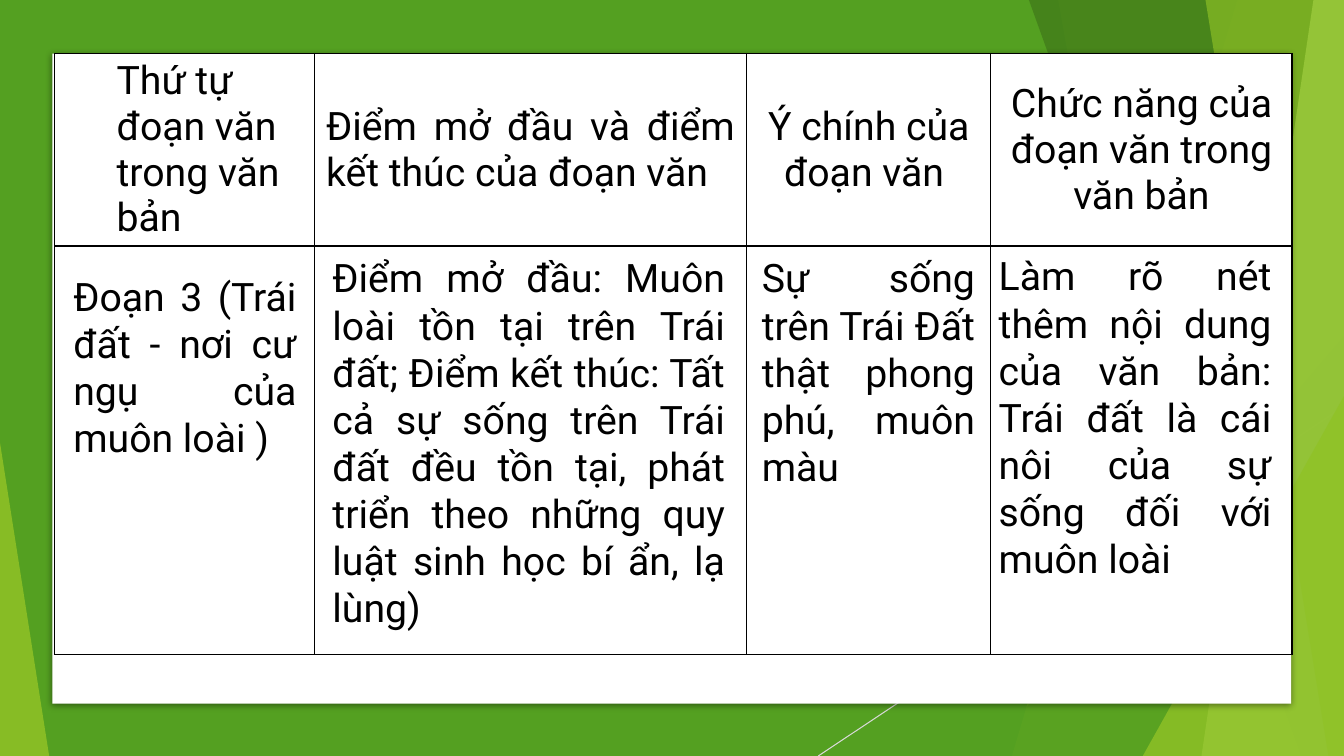
from dataclasses import dataclass

from lxml import etree
from pptx import Presentation
from pptx.dml.color import RGBColor
from pptx.enum.shapes import MSO_CONNECTOR, MSO_SHAPE
from pptx.enum.text import MSO_ANCHOR, MSO_AUTO_SIZE, PP_ALIGN
from pptx.oxml.ns import qn
from pptx.slide import Slide
from pptx.text.text import TextFrame
from pptx.util import Cm, Pt

RECTANGLE = MSO_SHAPE.RECTANGLE
TRIANGLE = MSO_SHAPE.ISOSCELES_TRIANGLE
STRAIGHT = MSO_CONNECTOR.STRAIGHT
MIDDLE = MSO_ANCHOR.MIDDLE
GROW = MSO_AUTO_SIZE.SHAPE_TO_FIT_TEXT
LEFT, CENTER, JUSTIFY = PP_ALIGN.LEFT, PP_ALIGN.CENTER, PP_ALIGN.JUSTIFY

SLIDE_WIDTH, SLIDE_HEIGHT = 33.87, 19.05


@dataclass(frozen=True)
class Theme:
    font: str = "Roboto"
    size: float = 28
    text: str = "000000"
    border: str = "000000"
    card: str = "FFFFFF"
    ray: str = "D9D9D9"
    green: str = "54A021"
    dark: str = "3F7819"
    lime: str = "90C226"
    pale: str = "C0E474"


THEME = Theme()


@dataclass(frozen=True)
class Band:
    """Facet from its slanted left edge to the right edge of the slide."""
    top_x: float
    bottom_x: float
    color: str
    opacity: int


@dataclass(frozen=True)
class Wedge:
    """Right-angled triangle standing on the bottom edge of the slide."""
    left: float
    top: float
    width: float
    apex: float
    color: str
    opacity: int


@dataclass(frozen=True)
class Header:
    text: str
    column_width: float
    align: PP_ALIGN
    indent: float = 0


@dataclass(frozen=True)
class Entry:
    text: str
    left: float
    top: float
    width: float
    height: float


FACETS = [
    Band(31.19, 25.5, THEME.lime, 30),
    Band(26.67, 30.05, THEME.lime, 20),
    Wedge(24.82, 8.46, 9.05, 1, THEME.green, 72),
    Band(25.93, 32.79, THEME.dark, 70),
    Band(33.1, 30.28, THEME.pale, 70),
    Band(30.38, 33.48, THEME.lime, 65),
    Wedge(28.8, 9.98, 5.07, 1, THEME.lime, 80),
    Wedge(0, 11.15, 1.24, 0, THEME.lime, 85),
]
HEADERS = [
    Header("Thứ tự đoạn văn trong văn bản", 6.55, LEFT, 1.27),
    Header("Điểm mở đầu và điểm kết thúc của đoạn văn ", 10.9, JUSTIFY),
    Header("Ý chính của đoạn văn ", 6.15, CENTER),
    Header("Chức năng của đoạn văn trong văn bản", 7.59, CENTER),
]
ROW_HEIGHTS = [4.85, 10.29]
ENTRIES = [
    Entry("Điểm mở đầu: Muôn loài tồn tại trên Trái đất; Điểm kết thúc: "
          "Tất cả sự sống trên Trái đất đều tồn tại, phát triển theo những "
          "quy luật sinh học bí ẩn, lạ lùng)", 8.13, 6.27, 10.39, 9.83),
    Entry("Sự sống trên Trái Đất thật phong phú, muôn màu",
          18.95, 6.27, 5.87, 6.25),
    Entry("Làm rõ nét thêm nội dung của văn bản: Trái đất là cái nôi của "
          "sự sống đối với muôn loài", 24.92, 6.22, 7.37, 8.64),
    Entry("Đoạn 3 (Trái đất - nơi cư ngụ của muôn loài )",
          1.6, 6.73, 6.12, 6.25),
]


def paint(shape, color: str, opacity: int = 100) -> None:
    shape.shadow.inherit = False
    shape.line.fill.background()
    shape.fill.solid()
    shape.fill.fore_color.rgb = RGBColor.from_string(color)
    if opacity < 100:
        fill_color = shape.fill._xPr.find(qn("a:solidFill"))[0]
        etree.SubElement(fill_color, qn("a:alpha"), val=str(opacity * 1000))


def write(text_frame: TextFrame, text: str, align: PP_ALIGN) -> None:
    text_frame.text = text
    text_frame.word_wrap = True
    paragraph = text_frame.paragraphs[0]
    paragraph.alignment = align
    font = paragraph.runs[0].font
    font.name, font.size = THEME.font, Pt(THEME.size)
    font.color.rgb = RGBColor.from_string(THEME.text)


def add_facet(slide: Slide, facet: Band | Wedge) -> None:
    if isinstance(facet, Band):
        builder = slide.shapes.build_freeform(Cm(facet.top_x), 0)
        corners = [(SLIDE_WIDTH, 0), (SLIDE_WIDTH, SLIDE_HEIGHT),
                   (facet.bottom_x, SLIDE_HEIGHT)]
        builder.add_line_segments([(Cm(x), Cm(y)) for x, y in corners])
        shape = builder.convert_to_shape()
    else:
        shape = slide.shapes.add_shape(
            TRIANGLE, Cm(facet.left), Cm(facet.top), Cm(facet.width),
            Cm(SLIDE_HEIGHT - facet.top))
        shape.adjustments[0] = facet.apex
    paint(shape, facet.color, facet.opacity)


def add_background(slide: Slide) -> None:
    backdrop = slide.shapes.add_shape(
        RECTANGLE, 0, 0, Cm(SLIDE_WIDTH), Cm(SLIDE_HEIGHT))
    paint(backdrop, THEME.green)
    ray = slide.shapes.add_connector(
        STRAIGHT, Cm(SLIDE_WIDTH), Cm(10.24), Cm(20.62), Cm(SLIDE_HEIGHT))
    ray.line.color.rgb = RGBColor.from_string(THEME.ray)
    ray.line.width = Pt(0.75)
    etree.SubElement(ray._element.spPr, qn("a:effectLst"))
    for facet in FACETS:
        add_facet(slide, facet)


def add_card(slide: Slide) -> None:
    card = slide.shapes.add_shape(
        RECTANGLE, Cm(1.32), Cm(1.35), Cm(31.22), Cm(16.38))
    paint(card, THEME.card)
    effects = card._element.spPr.find(qn("a:effectLst"))
    shadow = etree.SubElement(
        effects, qn("a:outerShdw"), blurRad=str(Pt(5)), dist=str(Pt(1.4)),
        dir="5400000", rotWithShape="0")
    color = etree.SubElement(shadow, qn("a:srgbClr"), val=THEME.border)
    etree.SubElement(color, qn("a:alpha"), val="43000")


def format_cell(cell) -> None:
    cell.vertical_anchor = MIDDLE
    cell.margin_left = cell.margin_right = Cm(0.3)
    cell.margin_top = cell.margin_bottom = 0
    properties = cell._tc.get_or_add_tcPr()
    for side in ("a:lnL", "a:lnR", "a:lnT", "a:lnB"):
        line = etree.SubElement(properties, qn(side), w=str(Pt(1)))
        fill = etree.SubElement(line, qn("a:solidFill"))
        etree.SubElement(fill, qn("a:srgbClr"), val=THEME.border)
    cell.fill.background()


def add_grid(slide: Slide) -> None:
    width = sum(header.column_width for header in HEADERS)
    table = slide.shapes.add_table(
        len(ROW_HEIGHTS), len(HEADERS), Cm(1.37), Cm(1.35), Cm(width),
        Cm(sum(ROW_HEIGHTS))).table
    table.first_row = table.horz_banding = False
    for row, height in zip(table.rows, ROW_HEIGHTS):
        row.height = Cm(height)
    for cell in table.iter_cells():
        format_cell(cell)
    for index, header in enumerate(HEADERS):
        table.columns[index].width = Cm(header.column_width)
        text_frame = table.cell(0, index).text_frame
        write(text_frame, header.text, header.align)
        paragraph_properties = text_frame.paragraphs[0]._p.get_or_add_pPr()
        paragraph_properties.set("marL", str(Cm(header.indent)))


def add_entry(slide: Slide, entry: Entry) -> None:
    text_box = slide.shapes.add_textbox(
        Cm(entry.left), Cm(entry.top), Cm(entry.width), Cm(entry.height))
    write(text_box.text_frame, entry.text, JUSTIFY)
    text_box.text_frame.auto_size = GROW


def main() -> None:
    presentation = Presentation()
    presentation.slide_width = Cm(SLIDE_WIDTH)
    presentation.slide_height = Cm(SLIDE_HEIGHT)
    slide = presentation.slides.add_slide(presentation.slide_layouts[6])
    # Green backdrop with facets, then the white card
    add_background(slide)
    add_card(slide)
    # Table grid with headers, and the entries laid over its second row
    add_grid(slide)
    for entry in ENTRIES:
        add_entry(slide, entry)
    presentation.save("out.pptx")


if __name__ == "__main__":
    main()
